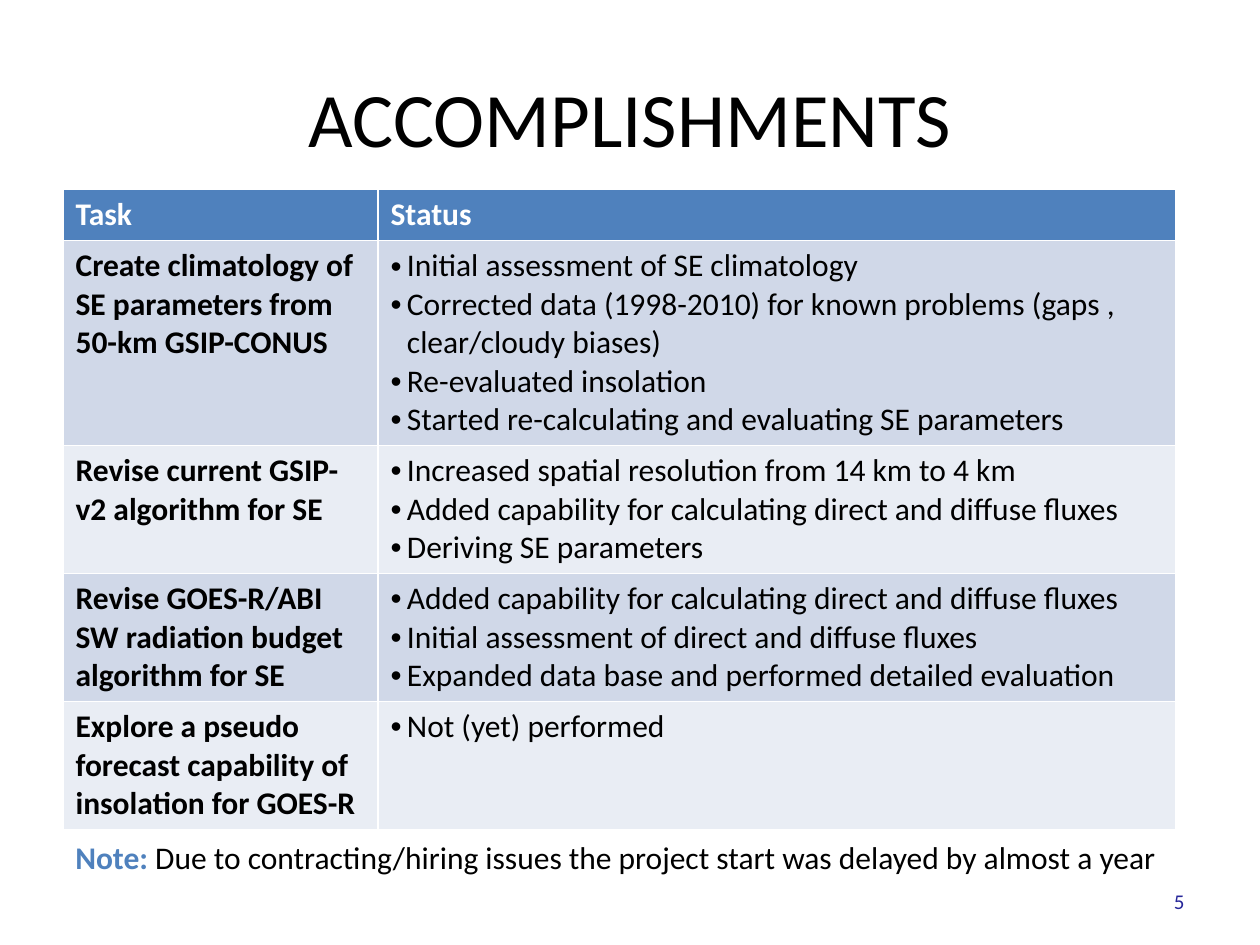
from lxml.etree import SubElement
from pptx import Presentation
from pptx.dml.color import RGBColor
from pptx.enum.text import MSO_ANCHOR, MSO_AUTO_SIZE, PP_ALIGN
from pptx.oxml.ns import qn
from pptx.util import Inches, Pt


def color(hex_value):
    return RGBColor.from_string(hex_value)


def write(paragraph, text, hex_value, **font_format):
    run = paragraph.add_run()
    run.text = text
    run.font.color.rgb = color(hex_value)
    for name, value in {"name": "Calibri", "size": Pt(18), "bold": False, **font_format}.items():
        setattr(run.font, name, value)


BLACK, WHITE, BLUE, NAVY = "000000", "FFFFFF", "4F81BD", "262699"
BANDS = ["D0D8E8", "E9EDF4"]

TASKS = [
    ("Create climatology of SE parameters from 50-km GSIP-CONUS", [
        "Initial assessment of SE climatology",
        "Corrected data (1998-2010) for known problems (gaps , clear/cloudy biases)",
        "Re-evaluated insolation",
        "Started re-calculating and evaluating SE parameters",
    ]),
    ("Revise current GSIP-v2 algorithm for SE", [
        "Increased spatial resolution from 14 km to 4 km",
        "Added capability for calculating direct and diffuse fluxes",
        "Deriving SE parameters",
    ]),
    ("Revise GOES-R/ABI SW radiation budget algorithm for SE", [
        "Added capability for calculating direct and diffuse fluxes",
        "Initial assessment of direct and diffuse fluxes",
        "Expanded data base and performed detailed evaluation",
    ]),
    ("Explore a pseudo forecast capability of insolation for GOES-R", [
        "Not (yet) performed",
    ]),
]

deck = Presentation()
deck.slide_width, deck.slide_height = Inches(10), Inches(7.5)
slide = deck.slides.add_slide(deck.slide_layouts[5])

heading = slide.shapes.title
place = {"left": 0.5, "top": 0.3, "width": 9, "height": 1.25}
for name, value in place.items():
    setattr(heading, name, Inches(value))
heading.text_frame.vertical_anchor = MSO_ANCHOR.MIDDLE
heading_line = heading.text_frame.paragraphs[0]
heading_line.alignment = PP_ALIGN.CENTER
write(heading_line, "ACCOMPLISHMENTS", BLACK, size=Pt(44))

status_frame = slide.shapes.add_table(
    len(TASKS) + 1, 2, Inches(0.5), Inches(1.5), Inches(8.83), Inches(5.01))
status_table = status_frame.table
for column, width in zip(status_table.columns, [2.5, 6.33]):
    column.width = Inches(width)
for row in status_table.rows:
    row.height = Inches(0.41)
status_frame.height = Inches(5.01)

for column, label in enumerate(["Task", "Status"]):
    header = status_table.cell(0, column)
    header.fill.solid()
    header.fill.fore_color.rgb = color(BLUE)
    write(header.text_frame.paragraphs[0], label, WHITE, bold=True)

for index, (task, statuses) in enumerate(TASKS):
    task_cell, status_cell = status_table.rows[index + 1].cells
    for cell in (task_cell, status_cell):
        cell.fill.solid()
        cell.fill.fore_color.rgb = color(BANDS[index % 2])
    write(task_cell.text_frame.paragraphs[0], task, BLACK, bold=True)
    for position, status in enumerate(statuses):
        frame = status_cell.text_frame
        item = frame.add_paragraph() if position else frame.paragraphs[0]
        properties = item._p.get_or_add_pPr()
        properties.set("marL", str(Inches(0.13)))
        properties.set("indent", str(-Inches(0.13)))
        SubElement(properties, qn("a:buFont")).set("typeface", "Arial")
        SubElement(properties, qn("a:buChar")).set("char", "•")
        write(item, status, BLACK)

page_number = slide.shapes.add_textbox(
    Inches(7.17), Inches(6.95), Inches(2.33), Inches(0.4)).text_frame
page_number.word_wrap = True
page_number.vertical_anchor = MSO_ANCHOR.MIDDLE
page_number.paragraphs[0].alignment = PP_ALIGN.RIGHT
write(page_number.paragraphs[0], "5", NAVY, size=Pt(12))

note = slide.shapes.add_textbox(
    Inches(0.5), Inches(6.6), Inches(8.87), Inches(0.4)).text_frame
note.word_wrap = False
note.auto_size = MSO_AUTO_SIZE.SHAPE_TO_FIT_TEXT
write(note.paragraphs[0], "Note: ", BLUE, bold=True)
write(note.paragraphs[0],
      "Due to contracting/hiring issues the project start was delayed by almost a year", BLACK)

deck.save("out.pptx")
